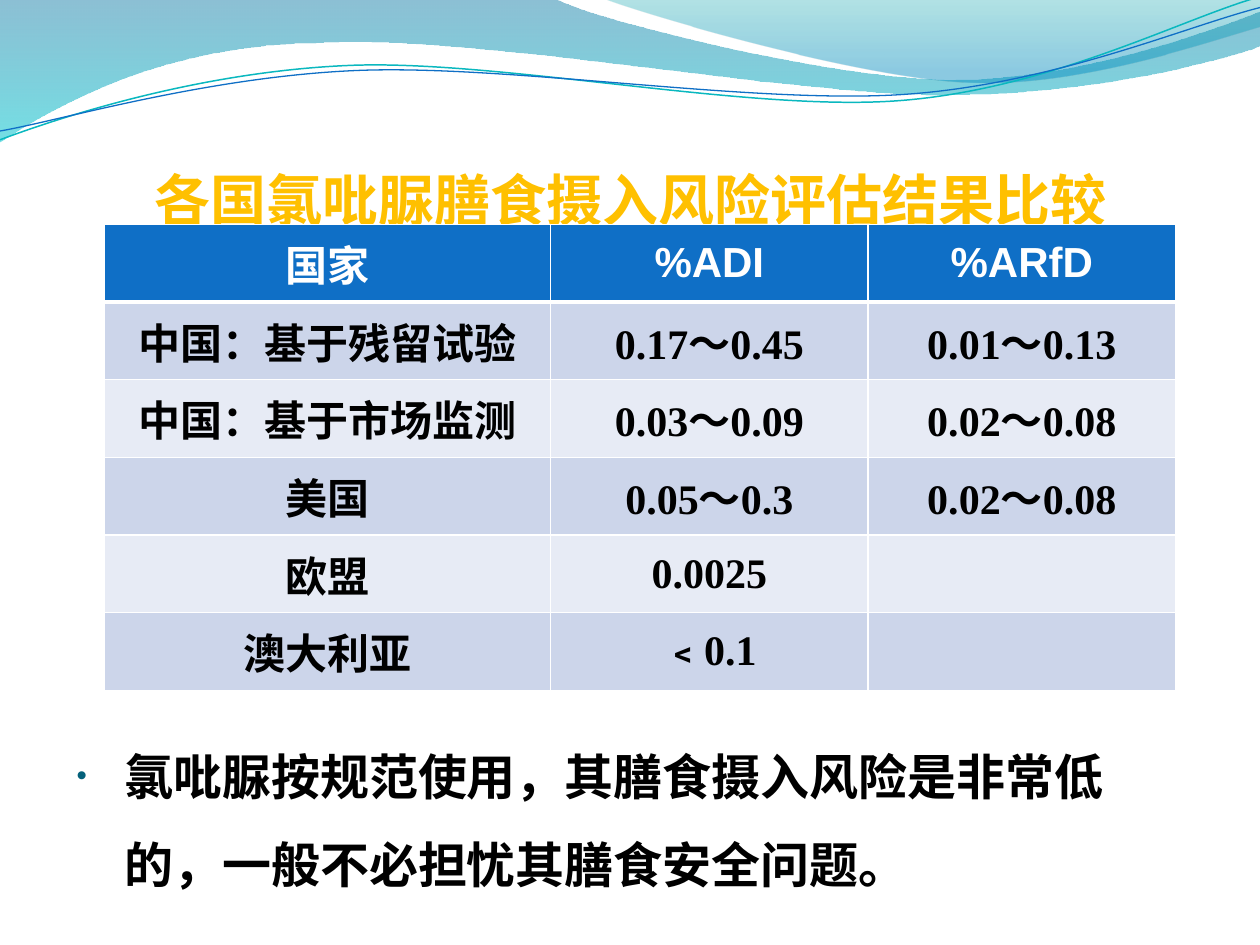
from lxml import etree
from pptx import Presentation
from pptx.dml.color import RGBColor
from pptx.enum.text import MSO_ANCHOR as Anchor, PP_ALIGN as Align
from pptx.oxml import parse_xml
from pptx.oxml.ns import nsdecls, qn
from pptx.util import Emu, Inches, Pt

W, H = 10, 7.5
TITLE = "各国氯吡脲膳食摄入风险评估结果比较"
NOTE = "氯吡脲按规范使用，其膳食摄入风险是非常低的，一般不必担忧其膳食安全问题。"
ROWS = [
    ("国家", "%ADI", "%ARfD"),
    ("中国：基于残留试验", "0.17～0.45", "0.01～0.13"),
    ("中国：基于市场监测", "0.03～0.09", "0.02～0.08"),
    ("美国", "0.05～0.3", "0.02～0.08"),
    ("欧盟", "0.0025", ""),
    ("澳大利亚", "﹤0.1", ""),
]
COLS = (3.54, 2.52, 2.44)
TABLE_LEFT, TABLE_TOP, TABLE_H = 0.83, 1.78, 3.7
HEAD_FILL, BANDS = "0F6FC6", ("CCD5EA", "E7EBF5")

# Two numbers are a straight step, six are a Bezier curve.
# Gradient stops are (position, colour, opacity in percent).
WAVES = [
    {"start": (0, -0.01),
     "steps": [(4.4, -0.01), (4.76, 0.17, 6.64, 0.63, 7.58, 0.63),
               (8.53, 0.63, 9.58, 0.26, 10, 0.09), (10.01, 0.36),
               (9.83, 0.44, 8.7, 0.76, 7.46, 0.75),
               (6.22, 0.75, 3.82, 0.28, 2.57, 0.34),
               (1.29, 0.35, 0.46, 0.83, -0.01, 1.13), (0, -0.01)],
     "stops": [(0, "0074A1", 45), (1, "00C6CF", 55)]},
    {"start": (4.79, -0.01),
     "steps": [(5.09, 0.11, 6.82, 0.62, 7.69, 0.65),
               (8.56, 0.69, 9.61, 0.32, 10, 0.21), (10, 0), (4.79, -0.01)],
     "stops": [(0, "00A1A9", 30), (0.8, "008BBF", 45)]},
    {"start": (0, 1.11),
     "steps": [(0.48, 0.93, 1.58, 0.57, 2.77, 0.52),
               (3.95, 0.47, 5.93, 0.89, 7.13, 0.8),
               (8.33, 0.71, 9.38, 0.15, 9.98, -0.02)],
     "line": ("0AB8BF", 0.85)},
    {"start": (0, 1.04),
     "steps": [(0.47, 0.96, 1.64, 0.61, 2.83, 0.56),
               (4.03, 0.51, 5.97, 0.83, 7.17, 0.75),
               (8.36, 0.67, 9.41, 0.21, 10, 0.06)],
     "line": ("0F6FC6", 0.75)},
]


def rgb(value):
    return RGBColor.from_string(value)


def write(tf, text, size, font, color, align=None):
    p = tf.paragraphs[0]
    p.alignment = align
    r = p.add_run()
    r.text = text
    formats = {"size": Pt(size), "name": font, "bold": True}
    for name, value in formats.items():
        setattr(r.font, name, value)
    r.font.color.rgb = rgb(color)
    return p


def build_curve(shapes, start, steps, close):
    """Build a freeform through all points, then join triples into curves."""
    x, y = map(Inches, start)
    builder = shapes.build_freeform(x, y)
    points = [(Inches(step[i]), Inches(step[i + 1]))
              for step in steps for i in range(0, len(step), 2)]
    builder.add_line_segments(points, close=close)
    sp = builder.convert_to_shape()
    lines = iter(sp._element.findall(".//" + qn("a:lnTo")))
    for step in steps:
        segment = [next(lines) for _ in range(len(step) // 2)]
        if len(segment) == 3:
            curve = etree.Element(qn("a:cubicBezTo"))
            segment[0].addprevious(curve)
            for line in segment:
                curve.append(line[0])
                line.getparent().remove(line)
    return sp


def add_wave(shapes, start, steps, stops=None, line=None):
    sp = build_curve(shapes, start, steps, close=bool(stops))
    sp.shadow.inherit = False
    if line:
        sp.fill.background()
        sp.line.color.rgb, sp.line.width = rgb(line[0]), Pt(line[1])
        return
    sp.line.fill.background()
    sp.fill.gradient()
    sp.fill.gradient_angle = 270
    for stop, (position, color, _) in zip(sp.fill.gradient_stops, stops):
        stop.position, stop.color.rgb = position, rgb(color)
    colors = sp._element.spPr.findall(".//" + qn("a:gs") + "/" + qn("a:srgbClr"))
    for node, (_, _, opacity) in zip(colors, stops):
        etree.SubElement(node, qn("a:alpha"), val=str(opacity * 1000))


def set_borders(cell, **widths):
    tc_pr = cell._tc.get_or_add_tcPr()
    for i, side in enumerate("LRTB"):
        width = Pt(widths.get(side, 1))
        tc_pr.insert(i, parse_xml(
            f'<a:ln{side} {nsdecls("a")} w="{width}"><a:solidFill>'
            f'<a:srgbClr val="FFFFFF"/></a:solidFill></a:ln{side}>'))


def add_results(shapes):
    box = map(Inches, (TABLE_LEFT, TABLE_TOP, sum(COLS), TABLE_H))
    table = shapes.add_table(len(ROWS), len(COLS), *box).table
    for column, width in zip(table.columns, COLS):
        column.width = Inches(width)
    for i, row in enumerate(ROWS):
        table.rows[i].height = Inches(TABLE_H / len(ROWS))
        for j, text in enumerate(row):
            cell = table.cell(i, j)
            cell.vertical_anchor = Anchor.MIDDLE
            cell.fill.solid()
            cell.fill.fore_color.rgb = rgb(BANDS[(i - 1) % 2] if i else HEAD_FILL)
            set_borders(cell, **({0: {"B": 3}, 1: {"T": 3}}.get(i, {})))
            if text:
                write(cell.text_frame, text, 24,
                      "Times New Roman" if i and j else "Arial",
                      "000000" if i else "FFFFFF", Align.CENTER)


def add_note(shapes):
    tf = shapes.add_textbox(*map(Inches, (0.51, 5.64, 9, 1.57))).text_frame
    tf.word_wrap = True
    tf.margin_right = Inches(0.45)
    p = write(tf, NOTE, 28, "TeX Gyre Pagella", "000000")
    p.line_spacing, p.space_before = 1.5, Pt(5.6)
    p_pr = p._p.get_or_add_pPr()
    p_pr.set("marL", str(Inches(0.38)))
    p_pr.set("indent", str(Inches(-0.38)))
    color = etree.SubElement(p_pr, qn("a:buClr"))
    etree.SubElement(color, qn("a:srgbClr"), val="04617B")
    etree.SubElement(p_pr, qn("a:buSzPct"), val="60000")
    etree.SubElement(p_pr, qn("a:buFont"), typeface="Arial")
    etree.SubElement(p_pr, qn("a:buChar"), char="•")


def format_title(title):
    box = {"left": 0.51, "top": 0.6, "width": 9, "height": 1.25}
    for name, value in box.items():
        setattr(title, name, Inches(value))
    tf = title.text_frame
    frame = {"vertical_anchor": Anchor.BOTTOM, "word_wrap": True,
             "margin_left": Emu(0), "margin_right": Emu(0),
             "margin_top": Inches(0.05), "margin_bottom": Emu(0)}
    for name, value in frame.items():
        setattr(tf, name, value)
    write(tf, TITLE, 32, "Calibri", "FFC000", Align.CENTER)


def main():
    prs = Presentation()
    prs.slide_width, prs.slide_height = Inches(W), Inches(H)
    s = prs.slides.add_slide(prs.slide_layouts[5])
    title = s.shapes.title
    for wave in WAVES:
        add_wave(s.shapes, **wave)
    s.shapes._spTree.append(title._element)  # in front of the waves
    format_title(title)
    add_results(s.shapes)
    add_note(s.shapes)
    prs.save("out.pptx")


if __name__ == "__main__":
    main()
